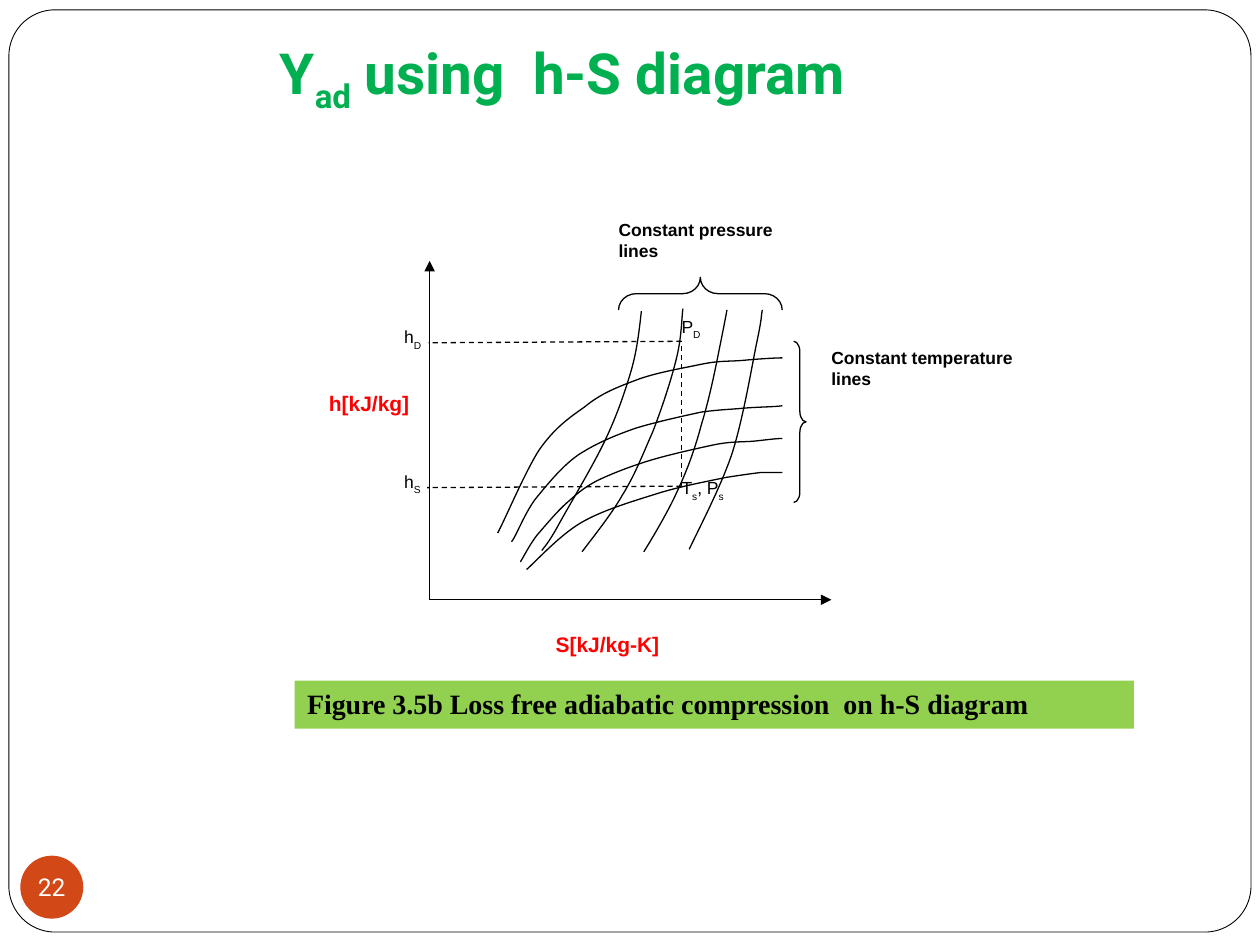
import pptx
import pptx.util
import pptx.dml.color
import pptx.enum.dml
import pptx.enum.shapes
import pptx.enum.text
import pptx.oxml.ns
import lxml.etree

Cm, Pt = pptx.util.Cm, pptx.util.Pt
RGB = pptx.dml.color.RGBColor.from_string
SHAPE = pptx.enum.shapes.MSO_SHAPE
ANCHOR = pptx.enum.text.MSO_ANCHOR
qn = pptx.oxml.ns.qn
COLORS = {"ink": "000000", "paper": "FFFFFF", "title": "00B050",
          "axis": "FF0000", "caption": "92D050", "badge": "D34817"}

prs = pptx.Presentation()
prs.slide_width, prs.slide_height = Cm(25.4), Cm(19.05)
s = prs.slides.add_slide(prs.slide_layouts[6])


def add_shape(kind, box, fill=None, line=None):
    sp = s.shapes.add_shape(kind, *[Cm(v) for v in box])
    sp.shadow.inherit = False
    if fill:
        sp.fill.solid()
        sp.fill.fore_color.rgb = RGB(COLORS[fill])
    else:
        sp.fill.background()
    if line:
        sp.line.color.rgb = RGB(COLORS["ink"])
        sp.line.width = Pt(line)
    else:
        sp.line.fill.background()
    return sp


def write(sp, parts, size, font, color, bold=False, inset=True, drop=-30):
    tf = sp.text_frame
    tf.word_wrap = inset
    tf.vertical_anchor = ANCHOR.TOP
    if not inset:
        tf.margin_left = tf.margin_right = tf.margin_top = tf.margin_bottom = 0
    p = tf.paragraphs[0]
    p.alignment = pptx.enum.text.PP_ALIGN.LEFT
    p.font.size, p.font.name, p.font.bold = Pt(size), font, bold
    p.font.color.rgb = RGB(COLORS[color])
    for i, part in enumerate(parts):
        r = p.add_run()
        r.text = part
        if i % 2:
            r._r.get_or_add_rPr().set("baseline", str(drop * 1000))
    return tf


add_shape(SHAPE.ROUNDED_RECTANGLE, (0.18, 0.2, 25.04, 18.59), "paper", 0.5).adjustments[0] = 0.05

sp = s.shapes.add_textbox(Cm(2.54), Cm(0.76), Cm(21.59), Cm(3.18))
tf = write(sp, ["Y", "ad", " using  h-S diagram"], 32.4, "Roboto", "title", True, drop=-25)
tf.margin_left, tf.margin_top = Cm(3.1), 0

sp = add_shape(SHAPE.OVAL, (0.41, 17.25, 1.27, 1.27), "badge")
tf = write(sp, ["22"], 14, "Roboto", "paper", inset=False)
tf.vertical_anchor = ANCHOR.MIDDLE
tf.paragraphs[0].alignment = pptx.enum.text.PP_ALIGN.CENTER

sp = add_shape(SHAPE.RECTANGLE, (5.94, 13.72, 16.92, 0.97), "caption")
write(sp, ["Figure 3.5b Loss free adiabatic compression  on h-S diagram"],
      16, "Times New Roman", "ink", True)

temperature_curves = [
    [(413, 446), (415, 443), (420, 433), (426, 425), (433, 417), (442, 406), (450, 399),
     (458, 392), (462, 388), (473, 382), (483, 377), (498, 371), (514, 366), (530, 361),
     (553, 356), (567, 353), (582, 350), (591, 351), (600, 350), (609, 349), (616, 348), (621, 348)],
    [(406, 430), (410, 425), (416, 408), (425, 396), (434, 385), (446, 370), (459, 361),
     (473, 352), (487, 346), (504, 340), (520, 335), (543, 330), (557, 327), (572, 325),
     (579, 325), (590, 324), (600, 323), (615, 323), (621, 322)],
    [(395, 423), (401, 412), (417, 374), (428, 357), (440, 340), (451, 332), (464, 323),
     (476, 313), (488, 308), (504, 302), (519, 296), (543, 292), (557, 289), (572, 286),
     (579, 287), (590, 286), (600, 285), (615, 284), (621, 284)],
    [(418, 452), (425, 446), (444, 425), (461, 415), (478, 405), (502, 398), (521, 392),
     (540, 386), (562, 382), (576, 379), (589, 377), (596, 376), (604, 375), (611, 375),
     (618, 375), (621, 375)],
]
pressure_curves = [
    [(511, 438), (516, 430), (530, 407), (538, 389), (546, 372), (552, 355), (557, 336),
     (563, 317), (568, 292), (571, 277), (574, 262), (576, 252), (577, 246)],
    [(462, 438), (467, 431), (485, 409), (494, 393), (504, 377), (510, 361), (518, 343),
     (525, 325), (533, 301), (537, 284), (541, 268), (541, 253), (542, 245)],
    [(547, 436), (553, 423), (572, 387), (581, 360), (590, 332), (597, 289), (601, 270),
     (605, 251), (604, 251), (605, 246)],
    [(430, 437), (432, 434), (434, 433), (442, 419), (450, 404), (470, 371), (480, 350),
     (490, 329), (496, 311), (501, 294), (506, 277), (508, 256), (509, 247)],
]
for points in temperature_curves + pressure_curves:
    fb = s.shapes.build_freeform(*points[0], scale=Cm(2.54) / 100)
    fb.add_line_segments(points[1:], close=False)
    sp = fb.convert_to_shape()
    sp.shadow.inherit = False
    sp.fill.background()
    sp.line.color.rgb = RGB(COLORS["ink"])
    sp.line.width = Pt(0.75)
    steps = list(sp._element.iter(qn("a:lnTo")))
    for i in range(0, len(steps), 3):
        steps[i].tag = qn("a:cubicBezTo")
        for step in steps[i + 1:i + 3]:
            steps[i].append(step[0])
            step.getparent().remove(step)

for x1, y1, x2, y2, dashed in [
    (13.74, 9.8, 13.74, 6.88, True),
    (13.74, 6.88, 8.64, 6.91, True),
    (13.74, 9.8, 8.61, 9.83, True),
    (8.66, 12.09, 16.76, 12.09, False),
    (8.66, 12.09, 8.66, 5.26, False),
]:
    c = s.shapes.add_connector(pptx.enum.shapes.MSO_CONNECTOR.STRAIGHT,
                               Cm(x1), Cm(y1), Cm(x2), Cm(y2))
    c.line.color.rgb = RGB(COLORS["ink"])
    c.line.width = Pt(0.75)
    if dashed:
        c.line.dash_style = pptx.enum.dml.MSO_LINE.DASH
    else:
        lxml.etree.SubElement(c.line._get_or_add_ln(), qn("a:tailEnd"), type="triangle")
    lxml.etree.SubElement(c._element.spPr, qn("a:effectLst"))

for box, rotation, bend in [
    ((16, 6.88, 0.25, 3.25), 0, 0.84),
    ((13.79, 4.27, 0.66, 3.3), 270, 0.54),
]:
    sp = add_shape(SHAPE.RIGHT_BRACE, box, line=0.75)
    sp.rotation = rotation
    sp.adjustments[0] = bend

for box, parts, size, color, bold, inset in [
    ((6.63, 7.87, 1.65, 0.51), ["h[kJ/kg]"], 12, "axis", True, False),
    ((11.2, 12.73, 2.11, 0.51), ["S[kJ/kg-K]"], 12, "axis", True, False),
    ((8.15, 6.58, 0.51, 0.61), ["h", "D"], 10, "ink", False, False),
    ((8.15, 9.5, 0.51, 0.61), ["h", "S"], 10, "ink", False, False),
    ((13.49, 6.25, 2.03, 0.97), ["P", "D"], 10, "ink", False, True),
    ((13.49, 9.5, 2.54, 1.3), ["T", "s", ", P", "s"], 10, "ink", False, True),
    ((12.22, 4.29, 3.81, 1.63), ["Constant pressure lines"], 10, "ink", True, True),
    ((16.51, 6.88, 4.9, 2.92), ["Constant temperature lines"], 10, "ink", True, True),
]:
    sp = s.shapes.add_textbox(*[Cm(v) for v in box])
    write(sp, parts, size, "Arial", color, bold, inset)

prs.save("out.pptx")
